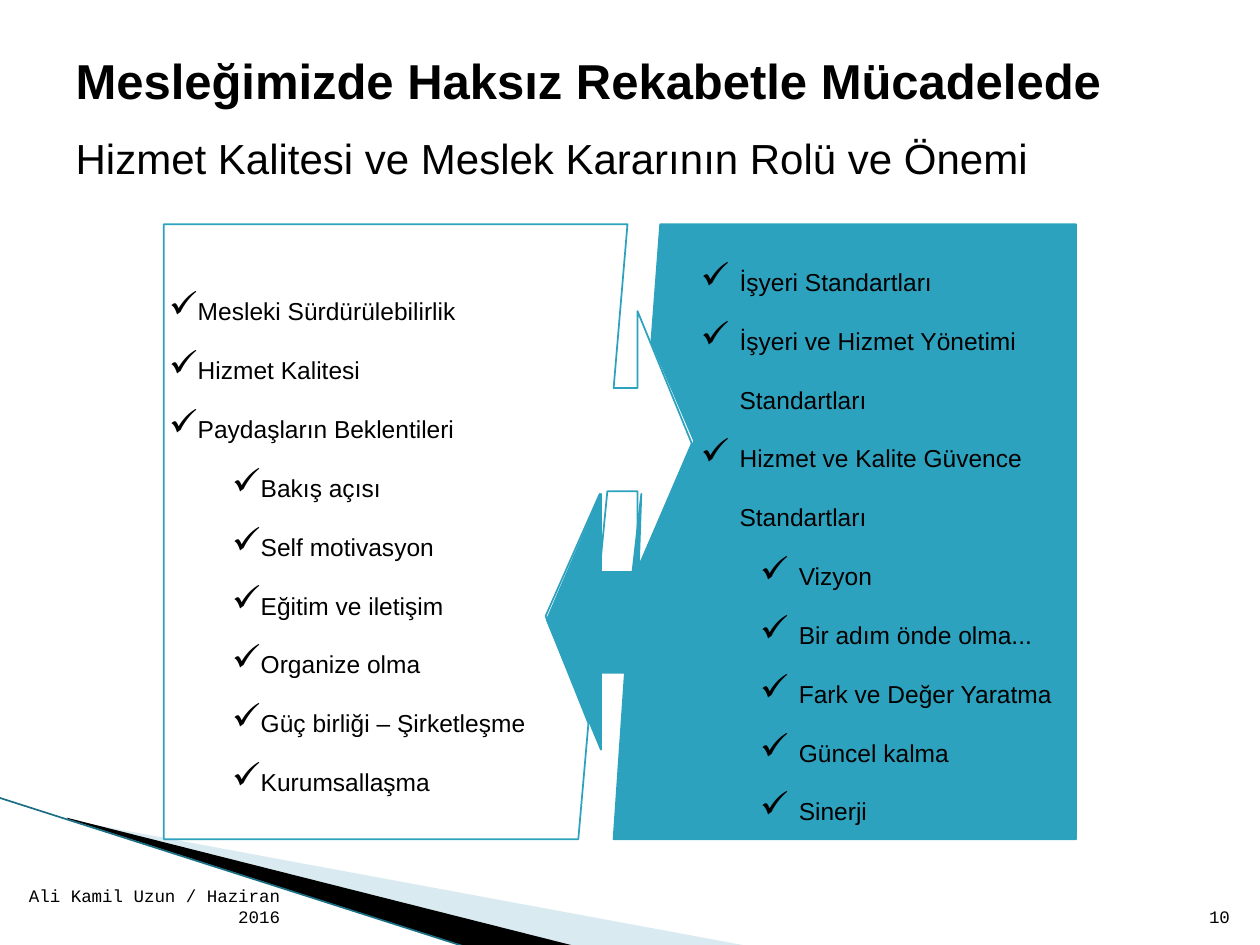
"""Build the slide on service quality and professional standards."""
from dataclasses import dataclass

from lxml.etree import SubElement
from pptx import Presentation
from pptx.dml.color import RGBColor
from pptx.enum.shapes import MSO_CONNECTOR
from pptx.enum.text import MSO_ANCHOR, MSO_AUTO_SIZE, PP_ALIGN
from pptx.oxml.ns import qn
from pptx.util import Inches, Pt

COLOURS = {
    "black": "000000",
    "white": "FFFFFF",
    "teal": "2DA2BF",
    "pale": "A0CBDC",
    "edge": "1B6F84",
}
Points = tuple[tuple[float, float], ...]


@dataclass(frozen=True)
class Level:
    """Left margin and first-line indent in inches."""
    margin: float
    indent: float


@dataclass(frozen=True)
class Panel:
    """An arrow-shaped panel with a two-level checklist."""
    outline: Points
    fill: str
    insets: tuple[float, float]
    levels: tuple[Level, Level]
    topics: tuple[str, ...]
    details: tuple[str, ...]


PANELS = (
    Panel(
        ((4.59, 6.66), (1.3, 6.66), (1.3, 1.78), (4.98, 1.78), (4.87, 3.08),
         (5.06, 3.08), (5.06, 2.47), (5.49, 3.52), (5.06, 4.52), (5.06, 3.9),
         (4.82, 3.9), (4.76, 4.52), (4.76, 3.92), (4.33, 4.89), (4.67, 5.74)),
        "white", (0.04, 1.3), (Level(0, 0), Level(0.47, 0.03)),
        ("Mesleki Sürdürülebilirlik", "Hizmet Kalitesi", "Paydaşların Beklentileri"),
        ("Bakış açısı", "Self motivasyon", "Eğitim ve iletişim", "Organize olma",
         "Güç birliği – Şirketleşme", "Kurumsallaşma"),
    ),
    Panel(
        ((5.24, 1.78), (8.54, 1.78), (8.54, 6.66), (4.87, 6.66), (4.96, 5.34),
         (4.77, 5.34), (4.77, 5.95), (4.34, 4.92), (4.77, 3.92), (4.77, 4.54),
         (5.02, 4.54), (5.09, 3.92), (5.07, 4.5), (5.51, 3.5), (5.17, 2.71)),
        "teal", (1.22, 0.04), (Level(0.31, -0.31), Level(0.78, -0.31)),
        ("İşyeri Standartları", "İşyeri ve Hizmet Yönetimi Standartları",
         "Hizmet ve Kalite Güvence Standartları"),
        ("Vizyon", "Bir adım önde olma...", "Fark ve Değer Yaratma",
         "Güncel kalma", "Sinerji"),
    ),
)


def colour(name: str) -> RGBColor:
    """Look up a palette colour."""
    return RGBColor.from_string(COLOURS[name])


def add_span(para, text: str, size: float, face: str = "Arial", bold: bool = False) -> None:
    """Add one formatted run to a paragraph."""
    span = para.add_run()
    span.text = text
    span.font.size = Pt(size)
    span.font.name = face
    span.font.bold = bold
    span.font.color.rgb = colour("black")


def add_outline(page, points: Points, fill: str):
    """Draw a closed, filled outline without a line."""
    corners = [(Inches(x), Inches(y)) for x, y in points]
    builder = page.shapes.build_freeform(*corners[0])
    builder.add_line_segments(corners[1:], close=True)
    shape = builder.convert_to_shape()
    shape.shadow.inherit = False
    shape.fill.solid()
    shape.fill.fore_color.rgb = colour(fill)
    shape.line.fill.background()
    return shape


def add_swoosh(page) -> None:
    """Draw the decorative wedges in the lower left corner."""
    pale = add_outline(page, ((0.55, 6.51), (5.95, 7.51), (4.56, 7.51), (0.55, 6.5)), "pale")
    tint = pale.fill._xPr.find(qn("a:solidFill"))[0]
    SubElement(tint, qn("a:alpha"), val="40000")
    add_outline(page, ((0.53, 6.49), (4.57, 7.51), (3.72, 7.52), (0.54, 6.5)), "black")
    edge = page.shapes.add_connector(
        MSO_CONNECTOR.STRAIGHT, Inches(-0.01), Inches(6.33), Inches(3.71), Inches(7.52))
    edge.line.color.rgb = colour("edge")
    edge.line.width = Pt(0.95)
    SubElement(edge._element.spPr, qn("a:effectLst"))


def add_footer(page, text: str, left: float, width: float) -> None:
    """Add right-aligned footer text."""
    box = page.shapes.add_textbox(Inches(left), Inches(7.01), Inches(width), Inches(0.4))
    frame = box.text_frame
    frame.word_wrap = True
    frame.vertical_anchor = MSO_ANCHOR.BOTTOM
    para = frame.paragraphs[0]
    para.alignment = PP_ALIGN.RIGHT
    add_span(para, text, 10, "Courier New")


def fill_title(page) -> None:
    """Place the title and its second line."""
    title = page.shapes.title
    title.left, title.top = Inches(0.5), Inches(0.3)
    title.width, title.height = Inches(9), Inches(1.25)
    frame = title.text_frame
    frame.auto_size = MSO_AUTO_SIZE.NONE
    frame.vertical_anchor = MSO_ANCHOR.MIDDLE
    heading, subtitle = frame.paragraphs[0], frame.add_paragraph()
    heading.alignment = subtitle.alignment = PP_ALIGN.LEFT
    subtitle.space_before = Pt(13)
    add_span(heading, "Mesleğimizde Haksız Rekabetle Mücadelede", 28, bold=True)
    add_span(subtitle, "Hizmet Kalitesi ve Meslek Kararının Rolü ve Önemi", 24)


def add_panel(page, panel: Panel) -> None:
    """Draw a panel and its checklist."""
    shape = add_outline(page, panel.outline, panel.fill)
    shape.line.color.rgb = colour("teal")
    shape.line.width = Pt(1)
    frame = shape.text_frame
    frame.word_wrap = True
    frame.vertical_anchor = MSO_ANCHOR.MIDDLE
    frame.margin_left, frame.margin_right = map(Inches, panel.insets)
    frame.margin_top = frame.margin_bottom = Inches(0.04)
    items = [(0, text) for text in panel.topics] + [(1, text) for text in panel.details]
    for index, (depth, text) in enumerate(items):
        para = frame.add_paragraph() if index else frame.paragraphs[0]
        level = panel.levels[depth]
        properties = para._p.get_or_add_pPr()
        properties.set("marL", str(Inches(level.margin)))
        properties.set("indent", str(Inches(level.indent)))
        SubElement(properties, qn("a:buSzPct"), val="150000")
        SubElement(properties, qn("a:buChar"), char="✓")
        para.level = depth
        para.alignment = PP_ALIGN.LEFT
        para.line_spacing = 2.0
        add_span(para, text, 14)


def main() -> None:
    """Assemble and save the deck."""
    deck = Presentation()
    deck.slide_width, deck.slide_height = Inches(10), Inches(7.5)
    page = deck.slides.add_slide(deck.slide_layouts[5])
    add_swoosh(page)
    add_footer(page, "Ali Kamil Uzun / Haziran 2016", 0, 2.32)
    add_footer(page, "10", 9.46, 0.4)
    fill_title(page)
    for panel in PANELS:
        add_panel(page, panel)
    deck.save("out.pptx")


if __name__ == "__main__":
    main()
